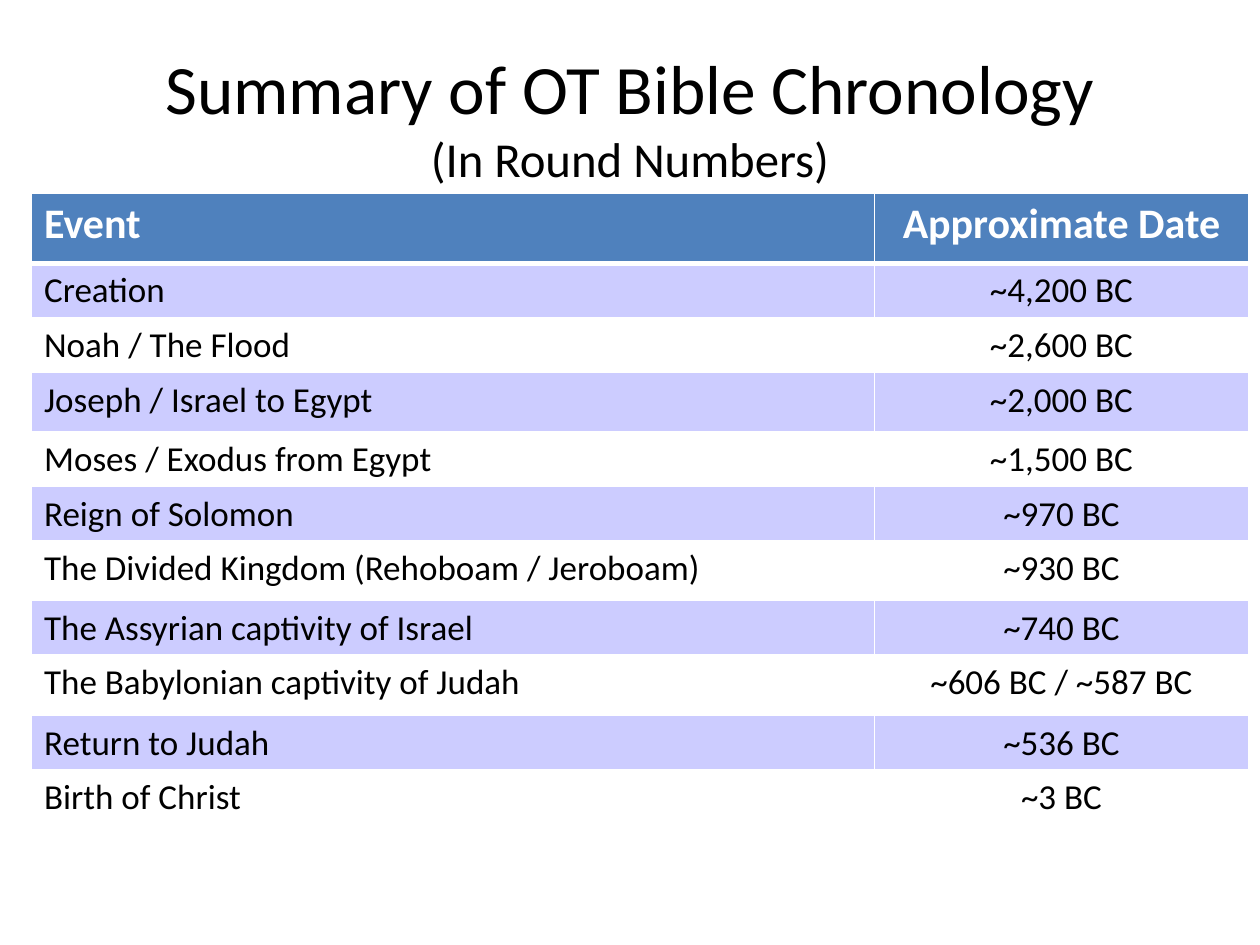
import pptx
import pptx.util
import pptx.dml.color
import pptx.enum.text
import lxml.etree
from dataclasses import dataclass

Inches = pptx.util.Inches
Align = pptx.enum.text.PP_ALIGN


@dataclass(frozen=True)
class Theme:
    font: str = "Calibri"
    black: str = "000000"
    white: str = "FFFFFF"
    header: str = "4F81BD"
    band: str = "CCCCFF"
    title_size: float = 39.6
    subtitle_size: float = 27.9
    header_size: float = 24
    body_size: float = 20


theme = Theme()


def add_text(paragraph, text, size, color=theme.black, bold=False, align=Align.LEFT):
    paragraph.alignment = align
    run = paragraph.add_run()
    run.text = text
    run.font.name = theme.font
    run.font.size = pptx.util.Pt(size)
    run.font.bold = bold
    run.font.color.rgb = pptx.dml.color.RGBColor.from_string(color)


def set_borders(cell, bottom_width):
    """Draw white cell borders; they must come before the cell's fill."""
    properties = cell._tc.get_or_add_tcPr()
    namespace = "{http://schemas.openxmlformats.org/drawingml/2006/main}"
    for side, width in (("lnL", 1), ("lnR", 1), ("lnT", 1), ("lnB", bottom_width)):
        line = lxml.etree.SubElement(
            properties, namespace + side, w=str(pptx.util.Pt(width)))
        fill = lxml.etree.SubElement(line, namespace + "solidFill")
        lxml.etree.SubElement(fill, namespace + "srgbClr", val=theme.white)


presentation = pptx.Presentation()
presentation.slide_width = Inches(10)
presentation.slide_height = Inches(7.5)
slide = presentation.slides.add_slide(presentation.slide_layouts[6])

# Title
title = slide.shapes.add_textbox(Inches(0.5), Inches(0.3), Inches(9), Inches(1.25))
title.text_frame.word_wrap = True
title.text_frame.vertical_anchor = pptx.enum.text.MSO_ANCHOR.MIDDLE
paragraph = title.text_frame.paragraphs[0]
add_text(paragraph, "Summary of OT Bible Chronology", theme.title_size, align=Align.CENTER)
paragraph.add_line_break()
add_text(paragraph, "(In Round Numbers)", theme.subtitle_size, align=Align.CENTER)

# Chronology: event, date, row height
chronology = [
    ("Event", "Approximate Date", 0.56),
    ("Creation", "~4,200 BC", 0.42),
    ("Noah / The Flood", "~2,600 BC", 0.4),
    ("Joseph / Israel to Egypt", "~2,000 BC", 0.47),
    ("Moses / Exodus from Egypt", "~1,500 BC", 0.42),
    ("Reign of Solomon", "~970 BC", 0.4),
    ("The Divided Kingdom (Rehoboam / Jeroboam)", "~930 BC", 0.47),
    ("The Assyrian captivity of Israel", "~740 BC", 0.42),
    ("The Babylonian captivity of Judah", "~606 BC / ~587 BC", 0.48),
    ("Return to Judah", "~536 BC", 0.42),
    ("Birth of Christ", "~3 BC", 0.4),
]

# Table
table = slide.shapes.add_table(
    len(chronology), 2, Inches(0.25), Inches(1.53), Inches(9.66), Inches(5.01)).table
table.columns[0].width = Inches(6.69)
table.columns[1].width = Inches(2.97)

for row, (event, date, height) in enumerate(chronology):
    table.rows[row].height = Inches(height)
    is_header = row == 0
    for column, (text, align) in enumerate(((event, Align.LEFT), (date, Align.CENTER))):
        cell = table.cell(row, column)
        set_borders(cell, bottom_width=3 if is_header else 1)
        # Header, then alternate tinted and clear rows
        if is_header or row % 2:
            cell.fill.solid()
            cell.fill.fore_color.rgb = pptx.dml.color.RGBColor.from_string(
                theme.header if is_header else theme.band)
        else:
            cell.fill.background()
        add_text(
            cell.text_frame.paragraphs[0], text,
            size=theme.header_size if is_header else theme.body_size,
            color=theme.white if is_header else theme.black,
            bold=is_header, align=align)

presentation.save("out.pptx")
